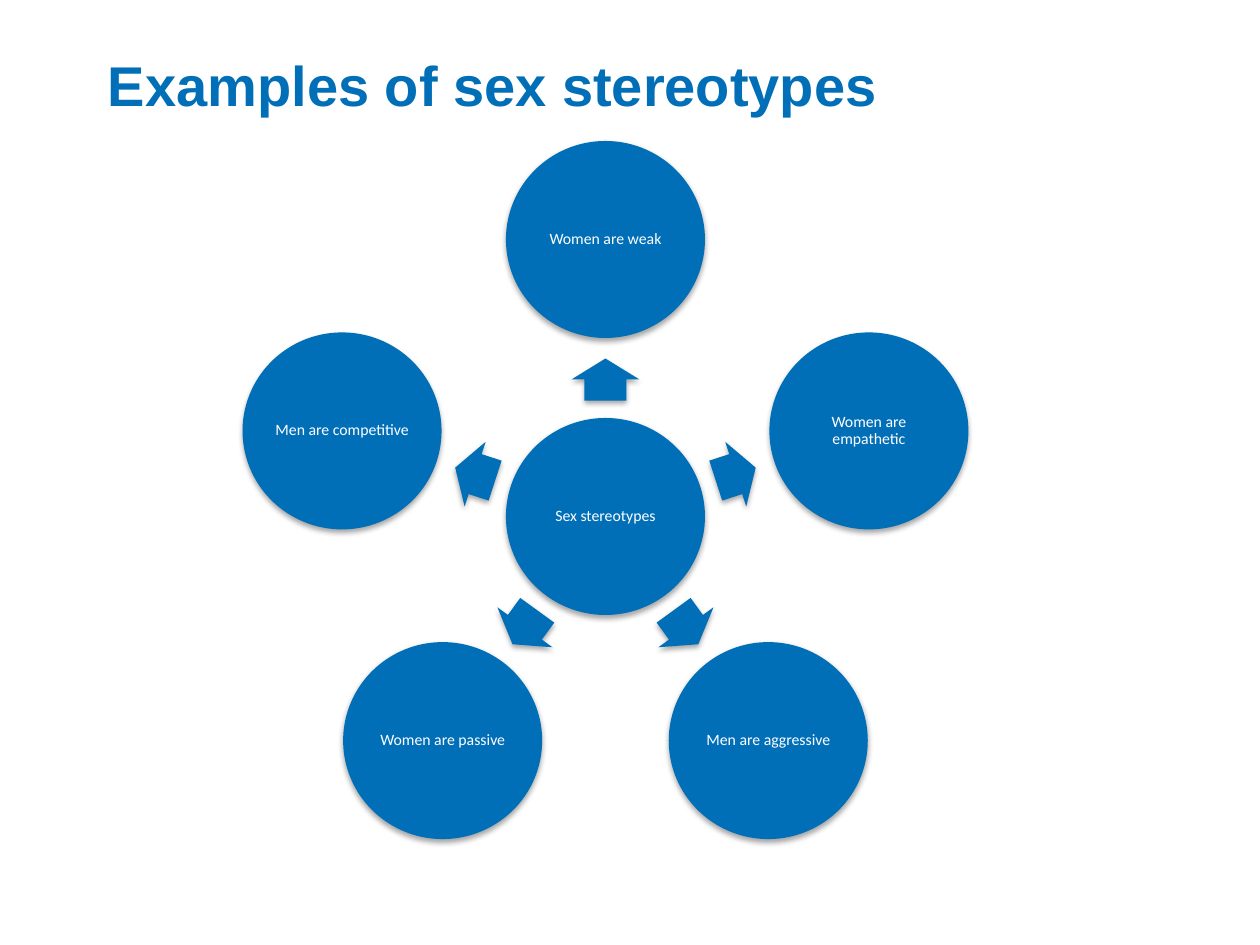
from math import cos, radians, sin

from lxml import etree
from pptx import Presentation
from pptx.dml.color import RGBColor as RGB
from pptx.enum.shapes import MSO_SHAPE as SHAPE
from pptx.enum.text import MSO_ANCHOR as ANCHOR, PP_ALIGN as ALIGN
from pptx.oxml import parse_xml
from pptx.util import Pt

PX = 914400 // 126
COLORS = {"blue": "006FB7", "white": "FFFFFF", "shadow": "000000"}
A_NS = "http://schemas.openxmlformats.org/drawingml/2006/main"
SHADOW = (
    f'<a:effectLst xmlns:a="{A_NS}">'
    '<a:outerShdw blurRad="38100" dist="22860" dir="5400000" rotWithShape="0">'
    f'<a:srgbClr val="{COLORS["shadow"]}"><a:alpha val="35000"/></a:srgbClr>'
    "</a:outerShdw></a:effectLst>"
)


def px(*lengths):
    return [round(n * PX) for n in lengths]


def style_text(p, font, size, color, bold=False):
    f = p.runs[0].font
    f.name, f.size, f.bold = font, Pt(size), bold
    f.color.rgb = RGB.from_string(COLORS[color])


def style_shape(sp):
    """Blue fill, no outline, soft shadow below."""
    sp.fill.solid()
    sp.fill.fore_color.rgb = RGB.from_string(COLORS["blue"])
    sp.line.fill.background()
    sp.shadow.inherit = False
    old = sp._element.spPr.find(f"{{{A_NS}}}effectLst")
    old.getparent().replace(old, parse_xml(SHADOW))


def add_title(s, box, text):
    tf = s.shapes.add_textbox(*px(*box)).text_frame
    tf.word_wrap = True
    tf.margin_left, tf.margin_top, tf.margin_right, tf.margin_bottom = px(6, 13, 6, 6)
    tf.text = text
    style_text(tf.paragraphs[0], "Arial", 32, "blue", bold=True)


def add_circle(s, cx, cy, text):
    w, h = 199, 197
    sp = s.shapes.add_shape(SHAPE.OVAL, *px(cx - w / 2, cy - h / 2, w, h))
    style_shape(sp)
    tf = sp.text_frame
    tf.word_wrap = True
    tf.vertical_anchor = ANCHOR.MIDDLE
    tf.margin_left = tf.margin_top = tf.margin_right = tf.margin_bottom = PX
    tf.text = text
    p = tf.paragraphs[0]
    p.alignment, p.line_spacing = ALIGN.CENTER, 0.9
    style_text(p, "Calibri", 9, "white")


def add_arrow(s, cx, cy, angle):
    """Block arrow pointing away from (cx, cy), angle clockwise from up."""
    tail, neck, tip, shaft, head = 116, 137, 158, 21, 34
    outline = [(-shaft, tail), (-shaft, neck), (-head, neck), (0, tip),
               (head, neck), (shaft, neck), (shaft, tail)]
    c, n = cos(angle), sin(angle)
    points = [px(cx + x * c + r * n, cy + x * n - r * c) for x, r in outline]
    builder = s.shapes.build_freeform(*points[0])
    builder.add_line_segments(points[1:], close=True)
    style_shape(builder.convert_to_shape())


def add_radial(s, box, hub, items):
    """Hub circle with the items evenly spaced on a ring around it."""
    left, top, width, _ = box
    radius, circle_h = 277, 197
    cx, cy = left + width / 2, top + circle_h / 2 + radius
    add_circle(s, cx, cy, hub)
    for i, text in enumerate(items):
        angle = radians(i * 360 / len(items))
        add_arrow(s, cx, cy, angle)
        add_circle(s, cx + radius * sin(angle), cy - radius * cos(angle), text)


def main():
    prs = Presentation()
    prs.slide_width, prs.slide_height = px(1260, 945)
    s = prs.slides.add_slide(prs.slide_layouts[6])
    add_title(s, (102, 38, 1042, 150), "Examples of sex stereotypes")
    add_radial(s, (241, 141, 729, 698), "Sex stereotypes",
               ["Women are weak", "Women are empathetic", "Men are aggressive",
                "Women are passive", "Men are competitive"])
    prs.save("out.pptx")


if __name__ == "__main__":
    main()
